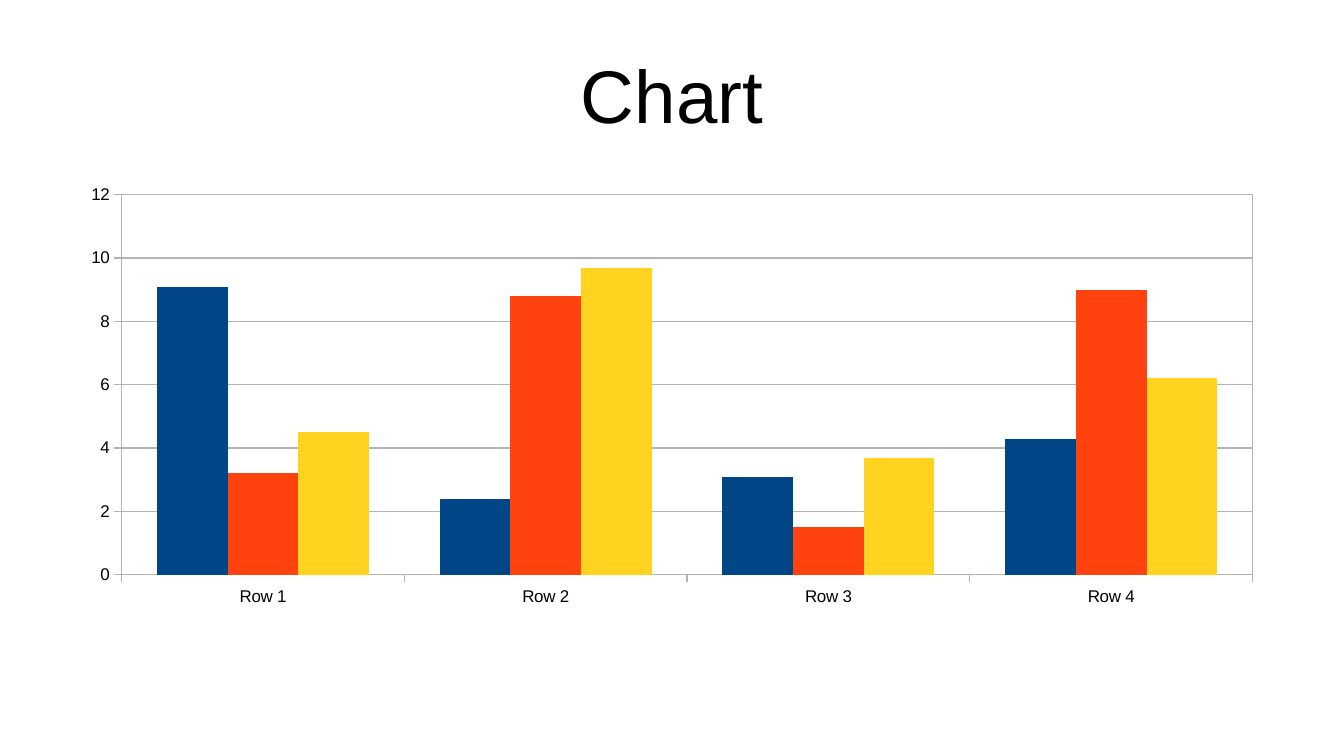
"""Build a slide with a title and a clustered column chart."""
from lxml import etree
from pptx import Presentation
from pptx.chart.data import CategoryChartData
from pptx.dml.color import RGBColor
from pptx.enum.chart import XL_CHART_TYPE, XL_TICK_MARK
from pptx.enum.text import MSO_ANCHOR, PP_ALIGN
from pptx.oxml import parse_xml
from pptx.util import Inches, Pt

COLUMNS = XL_CHART_TYPE.COLUMN_CLUSTERED
TICK_OUT, TICK_NONE = XL_TICK_MARK.OUTSIDE, XL_TICK_MARK.NONE
MIDDLE, CENTER = MSO_ANCHOR.MIDDLE, PP_ALIGN.CENTER
BLACK = RGBColor(0x00, 0x00, 0x00)
GREY = RGBColor(0xB3, 0xB3, 0xB3)
BLUE = RGBColor(0x00, 0x45, 0x86)
ORANGE = RGBColor(0xFF, 0x42, 0x0E)
YELLOW = RGBColor(0xFF, 0xD3, 0x20)
FONT = "Arial"
CHART_NS = "http://schemas.openxmlformats.org/drawingml/2006/chart"
DRAWING_NS = "http://schemas.openxmlformats.org/drawingml/2006/main"

SERIES = [
    ("Series 1", (9.1, 2.4, 3.1, 4.3), BLUE),
    ("Series 2", (3.2, 8.8, 1.5, 9), ORANGE),
    ("Series 3", (4.5, 9.7, 3.7, 6.2), YELLOW),
]
PLOT_SHARES = {"x": 0.045, "y": 0.041, "w": 0.935, "h": 0.866}

presentation = Presentation()
presentation.slide_width = Inches(11.02)
presentation.slide_height = Inches(6.2)
slide = presentation.slides.add_slide(presentation.slide_layouts[6])
margin = int(presentation.slide_width * 0.05)
content_width = int(presentation.slide_width * 0.9)

title = slide.shapes.add_textbox(margin, Inches(0.25), content_width, Inches(1.03)).text_frame
title.word_wrap = True
title.vertical_anchor = MIDDLE
title.margin_left = title.margin_right = title.margin_top = title.margin_bottom = 0
heading = title.paragraphs[0]
heading.alignment = CENTER
heading_run = heading.add_run()
heading_run.text = "Chart"
heading_run.font.name = FONT
heading_run.font.size = Pt(44)
heading_run.font.color.rgb = BLACK

row_data = CategoryChartData()
row_data.categories = [f"Row {number}" for number in range(1, 5)]
for name, values, color in SERIES:
    row_data.add_series(name, values)
chart = slide.shapes.add_chart(
    COLUMNS, margin, Inches(1.45), content_width, Inches(3.6), row_data).chart
chart.has_title = False
chart.has_legend = False
chart.font.name = FONT
chart.font.size = Pt(10)
chart.font.color.rgb = BLACK

columns = chart.plots[0]
columns.gap_width = 100
columns.overlap = 0
columns.vary_by_categories = False
for series, (name, values, color) in zip(columns.series, SERIES):
    series.format.fill.solid()
    series.format.fill.fore_color.rgb = color
    series.format.line.fill.background()

value_axis, row_axis = chart.value_axis, chart.category_axis
value_axis.minimum_scale, value_axis.maximum_scale = 0, 12
value_axis.major_unit = 2
value_axis.has_major_gridlines = True
for axis in (value_axis, row_axis):
    axis.major_tick_mark = TICK_OUT
    axis.minor_tick_mark = TICK_NONE
for line in (value_axis.format.line, row_axis.format.line,
             value_axis.major_gridlines.format.line):
    line.color.rgb = GREY
    line.width = Pt(0)

plot_area = chart.element.find(f".//{{{CHART_NS}}}plotArea")
for automatic_layout in plot_area.findall(f"{{{CHART_NS}}}layout"):
    plot_area.remove(automatic_layout)
layout = etree.Element(f"{{{CHART_NS}}}layout")
manual = etree.SubElement(layout, f"{{{CHART_NS}}}manualLayout")
settings = {"layoutTarget": "inner", "xMode": "edge", "yMode": "edge", **PLOT_SHARES}
for setting, value in settings.items():
    etree.SubElement(manual, f"{{{CHART_NS}}}{setting}").set("val", str(value))
plot_area.insert(0, layout)
plot_area.append(parse_xml(
    f'<c:spPr xmlns:c="{CHART_NS}" xmlns:a="{DRAWING_NS}"><a:noFill/>'
    f'<a:ln w="0"><a:solidFill><a:srgbClr val="{GREY}"/></a:solidFill></a:ln></c:spPr>'))

presentation.save("out.pptx")
